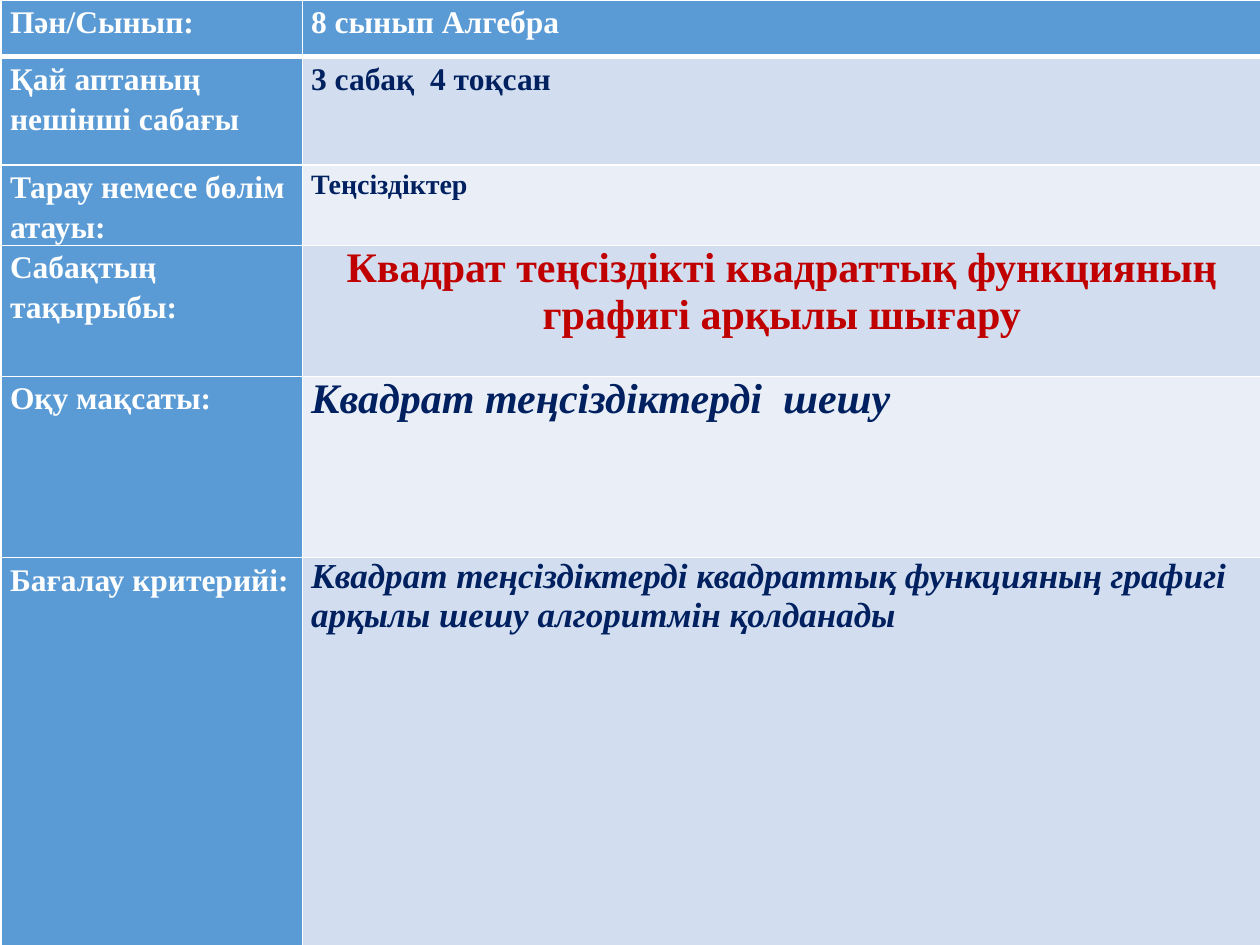
from dataclasses import dataclass

from lxml import etree
from pptx import Presentation
from pptx.dml.color import RGBColor
from pptx.enum.text import PP_ALIGN
from pptx.oxml.ns import qn
from pptx.table import _Cell
from pptx.util import Inches, Pt

LEFT, CENTER = PP_ALIGN.LEFT, PP_ALIGN.CENTER
FONT = "Times New Roman"
WHITE, BLUE, NAVY, RED = "FFFFFF", "5B9BD5", "002060", "C00000"
BANDS = ("EAEFF7", "D2DEEF")
SLIDE_WIDTH, SLIDE_HEIGHT = Inches(10), Inches(7.5)
COLUMN_SHARES = (0.239, 0.761)
THIN, THICK = 1, 3


@dataclass(frozen=True)
class CellText:
    text: str
    size: int = 18
    color: str = NAVY
    italic: bool = False
    align: PP_ALIGN = LEFT
    spacing: float | None = None


@dataclass(frozen=True)
class LessonRow:
    label: str
    content: CellText
    height: float


LESSON_ROWS = (
    LessonRow("Пән/Сынып:", CellText("8 сынып Алгебра", color=WHITE, spacing=1.15), 0.45),
    LessonRow("Қай аптаның нешінші сабағы", CellText("3 сабақ  4 тоқсан", spacing=1.15), 0.86),
    LessonRow("Тарау немесе бөлім атауы:", CellText("Теңсіздіктер", 16, spacing=1.15), 0.4),
    LessonRow(
        "Сабақтың тақырыбы:",
        CellText("Квадрат теңсіздікті квадраттық функцияның графигі арқылы шығару",
                 24, RED, align=CENTER),
        1.04,
    ),
    LessonRow("Оқу мақсаты:", CellText("Квадрат теңсіздіктерді  шешу", 24, italic=True), 1.44),
    LessonRow(
        "Бағалау критерийі:",
        CellText("Квадрат теңсіздіктерді квадраттық функцияның графигі арқылы "
                 "шешу алгоритмін қолданады", 20, italic=True),
        3.28,
    ),
)


def rgb(value: str) -> RGBColor:
    return RGBColor.from_string(value)


def set_borders(cell: _Cell, top: int, bottom: int) -> None:
    properties = cell._tc.get_or_add_tcPr()
    for side, width in (("lnL", THIN), ("lnR", THIN), ("lnT", top), ("lnB", bottom)):
        border = etree.SubElement(properties, qn(f"a:{side}"), w=str(Pt(width)))
        border_fill = etree.SubElement(border, qn("a:solidFill"))
        etree.SubElement(border_fill, qn("a:srgbClr"), val=WHITE)


def write_cell(cell: _Cell, content: CellText, fill: str, row: int) -> None:
    set_borders(cell, THICK if row == 1 else THIN, THICK if row == 0 else THIN)
    cell.fill.solid()
    cell.fill.fore_color.rgb = rgb(fill)
    cell.margin_left = cell.margin_right = Inches(0.07)
    cell.margin_top = cell.margin_bottom = 0
    paragraph = cell.text_frame.paragraphs[0]
    paragraph.alignment = content.align
    paragraph.line_spacing = content.spacing
    run = paragraph.add_run()
    run.text = content.text
    run.font.name = FONT
    run.font.size = Pt(content.size)
    run.font.bold = True
    run.font.italic = content.italic
    run.font.color.rgb = rgb(content.color)


def main() -> None:
    presentation = Presentation()
    presentation.slide_width, presentation.slide_height = SLIDE_WIDTH, SLIDE_HEIGHT
    slide = presentation.slides.add_slide(presentation.slide_layouts[6])
    total_height = Inches(sum(row.height for row in LESSON_ROWS))
    lesson_table = slide.shapes.add_table(
        len(LESSON_ROWS), len(COLUMN_SHARES), Inches(0.01), 0, SLIDE_WIDTH, total_height
    ).table
    for column, share in zip(lesson_table.columns, COLUMN_SHARES):
        column.width = int(SLIDE_WIDTH * share)
    for index, lesson_row in enumerate(LESSON_ROWS):
        lesson_table.rows[index].height = Inches(lesson_row.height)
        label = CellText(lesson_row.label, color=WHITE, spacing=1.15)
        write_cell(lesson_table.cell(index, 0), label, BLUE, index)
        content_fill = BANDS[index % 2] if index else BLUE
        write_cell(lesson_table.cell(index, 1), lesson_row.content, content_fill, index)
    presentation.save("out.pptx")


if __name__ == "__main__":
    main()
